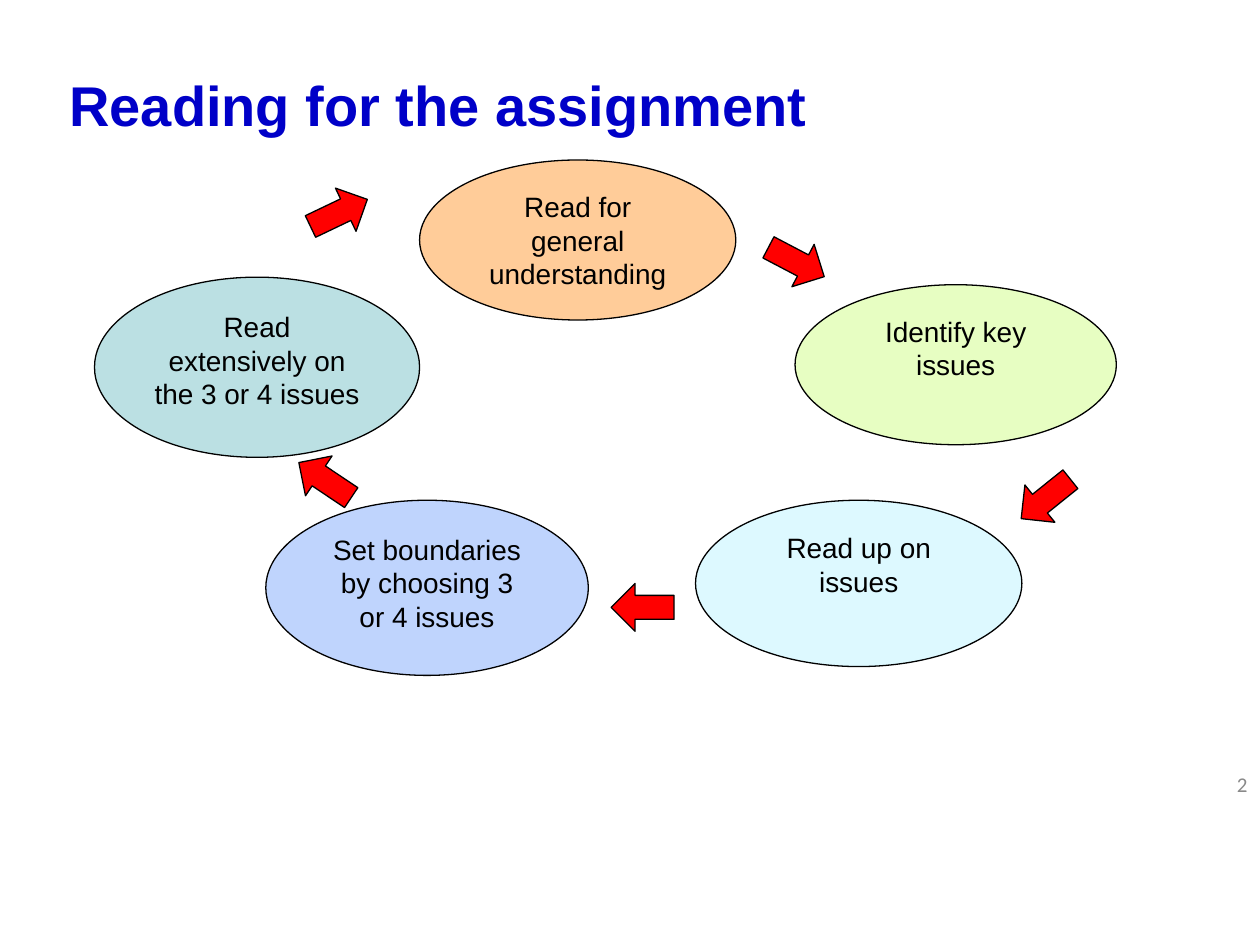
from pptx import Presentation
from pptx.dml.color import RGBColor
from pptx.enum.shapes import MSO_SHAPE
from pptx.enum.text import MSO_ANCHOR, PP_ALIGN
from pptx.util import Inches, Pt

OVAL, ARROW = MSO_SHAPE.OVAL, MSO_SHAPE.RIGHT_ARROW
LEFT, CENTER, RIGHT = PP_ALIGN.LEFT, PP_ALIGN.CENTER, PP_ALIGN.RIGHT
TOP, MIDDLE = MSO_ANCHOR.TOP, MSO_ANCHOR.MIDDLE
TITLE_ONLY = 5

# Reading cycle, clockwise: text, fill, (left, top, width, height)
STEPS = [
    ("Read for general understanding", "FFCC99", (3.33, 1.27, 2.51, 1.27)),
    ("Identify key issues", "E7FEC2", (6.31, 2.26, 2.55, 1.27)),
    ("Read up on issues", "DDF9FF", (5.52, 3.97, 2.59, 1.32)),
    ("Set boundaries by choosing 3 or 4 issues", "BFD4FD", (2.11, 3.97, 2.56, 1.39)),
    ("Read extensively on the 3 or 4 issues", "BBE0E3", (0.75, 2.2, 2.58, 1.43)),
]
# Arrow after each step: left, top, rotation
TURNS = [
    (6.07, 1.89, 27.7),
    (8.05, 3.77, 141.3),
    (4.85, 4.63, 180),
    (2.33, 3.62, 213.8),
    (2.44, 1.5, 334.5),
]


def color(hex_string):
    return RGBColor.from_string(hex_string)


def write(frame, text, size=16, font="Arial", ink="000000", bold=False,
          align=CENTER, anchor=TOP):
    frame.word_wrap = True
    frame.vertical_anchor = anchor
    paragraph = frame.paragraphs[0]
    paragraph.alignment = align
    run = paragraph.add_run()
    run.text = text
    run.font.size = Pt(size)
    run.font.name = font
    run.font.bold = bold
    run.font.color.rgb = color(ink)


class CycleSlide:
    title_ink = "0000C8"
    number_ink = "898989"
    outline = "000000"
    arrow_fill = "FF0000"
    arrow_size = (0.5, 0.38)

    def __init__(self, prs):
        self.slide = prs.slides.add_slide(prs.slide_layouts[TITLE_ONLY])

    def title(self, text, box):
        heading = self.slide.shapes.title
        heading.left, heading.top, heading.width, heading.height = map(Inches, box)
        write(heading.text_frame, text, size=32, ink=self.title_ink, bold=True,
              align=LEFT, anchor=MIDDLE)

    def page_number(self, text, box):
        number = self.slide.shapes.add_textbox(*map(Inches, box))
        write(number.text_frame, text, size=12, font="Calibri",
              ink=self.number_ink, align=RIGHT, anchor=MIDDLE)

    def outlined(self, preset, fill, box):
        shape = self.slide.shapes.add_shape(preset, *map(Inches, box))
        shape.shadow.inherit = False
        shape.fill.solid()
        shape.fill.fore_color.rgb = color(fill)
        shape.line.color.rgb = color(self.outline)
        shape.line.width = Pt(0.75)
        return shape

    def step(self, text, fill, box):
        write(self.outlined(OVAL, fill, box).text_frame, text)

    def arrow(self, left, top, rotation):
        turn = self.outlined(ARROW, self.arrow_fill, (left, top, *self.arrow_size))
        turn.rotation = rotation


def main():
    prs = Presentation()
    prs.slide_width, prs.slide_height = Inches(10), Inches(7.5)
    cycle = CycleSlide(prs)

    # Heading and page number
    cycle.title("Reading for the assignment", (0.45, 0.47, 9.03, 0.71))
    cycle.page_number("2", (7.67, 6.02, 2.33, 0.4))

    # Steps, then the arrows between them
    for step in STEPS:
        cycle.step(*step)
    for turn in TURNS:
        cycle.arrow(*turn)

    prs.save("out.pptx")


if __name__ == "__main__":
    main()
